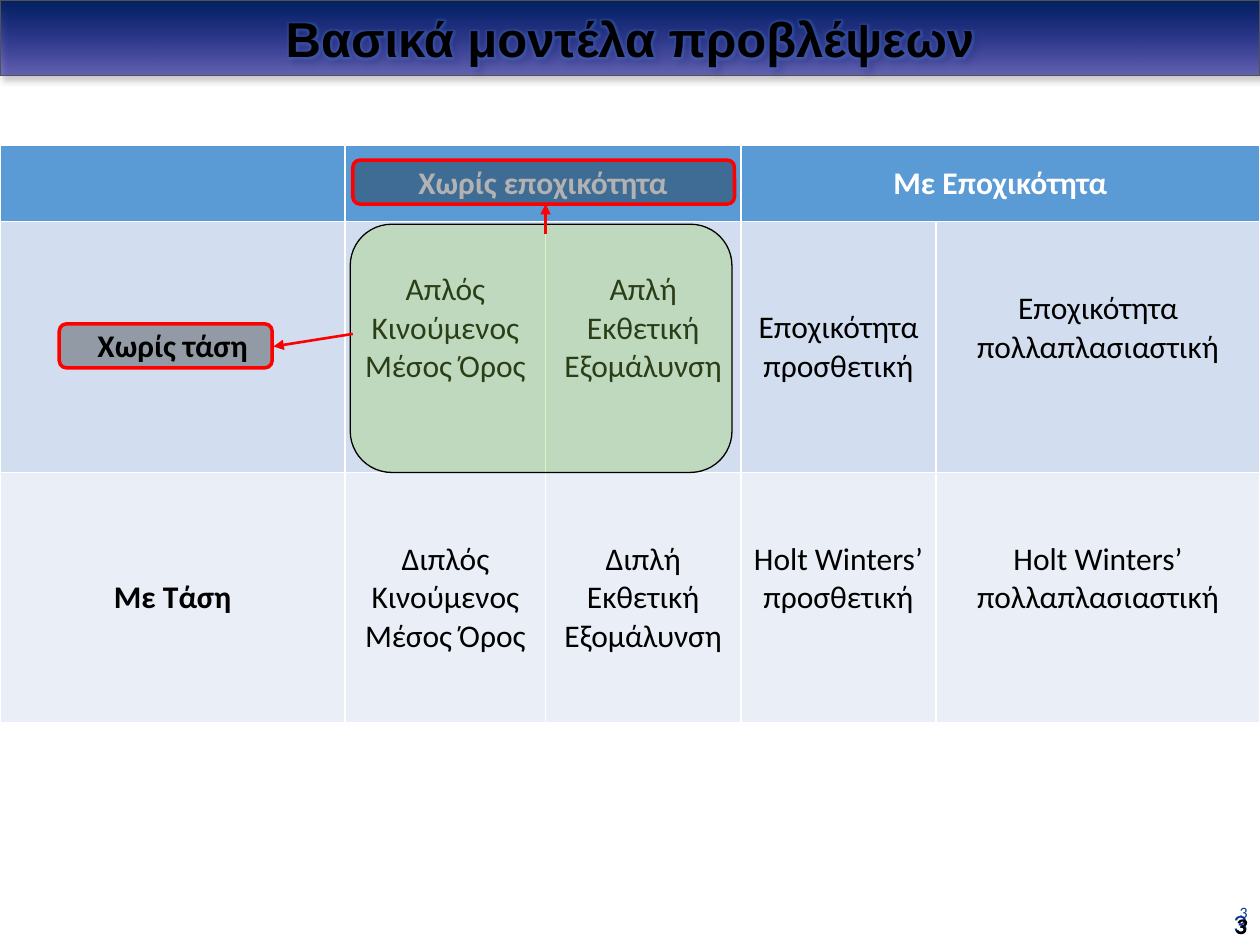
from lxml.etree import SubElement
from pptx import Presentation
from pptx.dml.color import RGBColor
from pptx.enum.shapes import MSO_CONNECTOR, MSO_SHAPE
from pptx.enum.text import MSO_ANCHOR as Anchor, PP_ALIGN as Align
from pptx.oxml import parse_xml
from pptx.oxml.ns import nsdecls, qn
from pptx.util import Inches, Pt

BLACK = RGBColor(0x00, 0x00, 0x00)
WHITE = RGBColor(0xFF, 0xFF, 0xFF)
RED = RGBColor(0xFF, 0x00, 0x00)
GREEN = RGBColor(0x92, 0xD0, 0x50)
NUMBER_BLUE = RGBColor(0x00, 0x33, 0x99)
TITLE_BORDER = RGBColor(0x52, 0x52, 0x52)
NAVY = RGBColor(0x00, 0x20, 0x60)
DEEP_BLUE = RGBColor(0x00, 0x00, 0x99)
GLOW_BLUE = RGBColor(0x44, 0x72, 0xC4)
HEADER_FILL = RGBColor(0x5B, 0x9B, 0xD5)
BAND_FILLS = [RGBColor(0xD2, 0xDE, 0xEF), RGBColor(0xEA, 0xEF, 0xF7)]

COLUMN_WIDTHS = [2.74, 1.59, 1.55, 1.55, 2.57]
ROW_HEIGHTS = [0.61, 1.99, 1.99]
HEADER = ["", "Χωρίς εποχικότητα", None, "Με Εποχικότητα", None]
MODELS = [
    ["Χωρίς τάση", "Απλός Κινούμενος Μέσος Όρος", "Απλή Εκθετική Εξομάλυνση",
     "Εποχικότητα προσθετική", "Εποχικότητα\nπολλαπλασιαστική"],
    ["Με Τάση", "Διπλός Κινούμενος Μέσος Όρος", "Διπλή Εκθετική Εξομάλυνση",
     "Holt Winters’ προσθετική", "Holt Winters’\nπολλαπλασιαστική"],
]
RAISED_CELLS = {(1, 1), (1, 2), (1, 4), (2, 3), (2, 4)}
RAISED_MARGIN = 0.35


def write_text(tf, text, size, font, color, align, bold=False, italic=False):
    for i, line in enumerate(text.split("\n")):
        p = tf.paragraphs[0] if i == 0 else tf.add_paragraph()
        p.alignment = align
        r = p.add_run()
        r.text = line
        r.font.size = Pt(size)
        r.font.name = font
        r.font.color.rgb = color
        r.font.bold = bold
        r.font.italic = italic


def color_xml(color, alpha):
    return f'<a:srgbClr val="{color}"><a:alpha val="{alpha * 1000}"/></a:srgbClr>'


def add_models_table(slide):
    table = slide.shapes.add_table(
        len(ROW_HEIGHTS), len(COLUMN_WIDTHS), Inches(0), Inches(1.15),
        Inches(sum(COLUMN_WIDTHS)), Inches(sum(ROW_HEIGHTS))).table
    for column, width in zip(table.columns, COLUMN_WIDTHS):
        column.width = Inches(width)
    for row, height in zip(table.rows, ROW_HEIGHTS):
        row.height = Inches(height)
    for col in (1, 3):
        table.cell(0, col).merge(table.cell(0, col + 1))
    fills = [HEADER_FILL, *BAND_FILLS]
    for row, texts in enumerate([HEADER, *MODELS]):
        for col, text in enumerate(texts):
            cell = table.cell(row, col)
            cell.fill.solid()
            cell.fill.fore_color.rgb = fills[row]
            cell.vertical_anchor = Anchor.MIDDLE
            if (row, col) in RAISED_CELLS:
                cell.margin_bottom = Inches(RAISED_MARGIN)
            if text:
                write_text(cell.text_frame, text, 18, "Calibri",
                           BLACK if row else WHITE, Align.CENTER,
                           bold=row == 0 or col == 0)


def add_title_bar(slide, text):
    sp = slide.shapes.add_shape(MSO_SHAPE.RECTANGLE, 0, 0, Inches(10), Inches(0.6))
    sp.line.color.rgb = TITLE_BORDER
    sp.line.width = Pt(0.75)
    gradient = parse_xml(
        f'<a:gradFill {nsdecls("a")} rotWithShape="1"><a:gsLst>'
        f'<a:gs pos="0">{color_xml(DEEP_BLUE, 50)}</a:gs>'
        f'<a:gs pos="100000">{color_xml(NAVY, 100)}</a:gs>'
        '</a:gsLst><a:lin ang="16200000" scaled="0"/></a:gradFill>')
    shadow = parse_xml(
        f'<a:effectLst {nsdecls("a")}><a:outerShdw blurRad="50800" dist="38100" '
        f'dir="2700000">{color_xml(BLACK, 40)}</a:outerShdw></a:effectLst>')
    sp_pr = sp.element.spPr
    sp_pr.find(qn("a:ln")).addprevious(gradient)
    sp_pr.append(shadow)
    tf = sp.text_frame
    tf.vertical_anchor = Anchor.MIDDLE
    write_text(tf, text, 28, "Arial", BLACK, Align.CENTER, bold=True)
    glow = parse_xml(
        f'<a:effectLst {nsdecls("a")}><a:glow rad="63500">'
        f'{color_xml(GLOW_BLUE, 40)}</a:glow></a:effectLst>')
    r_pr = tf.paragraphs[0].runs[0].font._element
    r_pr.find(qn("a:solidFill")).addnext(glow)


def add_page_number(slide, box, anchor, size, font, color, bold=False, italic=False):
    tf = slide.shapes.add_textbox(*map(Inches, box)).text_frame
    tf.word_wrap = True
    tf.vertical_anchor = anchor
    write_text(tf, "3", size, font, color, Align.RIGHT, bold, italic)


def add_highlight(slide, box, fill, line, width):
    sp = slide.shapes.add_shape(MSO_SHAPE.ROUNDED_RECTANGLE, *map(Inches, box))
    sp.shadow.inherit = False
    sp.fill.solid()
    sp.fill.fore_color.rgb = fill
    color = sp.element.spPr.find(qn("a:solidFill"))[0]
    SubElement(color, qn("a:alpha"), val="30000")
    sp.line.color.rgb = line
    sp.line.width = Pt(width)


def add_arrow(slide, *ends):
    arrow = slide.shapes.add_connector(MSO_CONNECTOR.STRAIGHT, *map(Inches, ends))
    arrow.line.color.rgb = RED
    arrow.line.width = Pt(1.5)
    sp_pr = arrow._element.spPr
    SubElement(sp_pr.find(qn("a:ln")), qn("a:tailEnd"), type="triangle")
    SubElement(sp_pr, qn("a:effectLst"))


def main():
    prs = Presentation()
    prs.slide_width = Inches(10)
    prs.slide_height = Inches(7.5)
    slide = prs.slides.add_slide(prs.slide_layouts[6])

    add_models_table(slide)
    footer = (7.67, 6.98, 2.33, 0.52)
    add_page_number(slide, footer, Anchor.MIDDLE, 9, "Calibri", NUMBER_BLUE)
    add_page_number(slide, footer, Anchor.BOTTOM, 14, "Arial", NUMBER_BLUE)
    add_page_number(slide, (9.5, 7.2, 0.5, 0.3), Anchor.BOTTOM, 12, "Arial", BLACK,
                    bold=True, italic=True)
    add_title_bar(slide, "Βασικά μοντέλα προβλέψεων")
    add_highlight(slide, (2.78, 1.78, 3.03, 1.97), GREEN, BLACK, 0.75)
    add_highlight(slide, (2.8, 1.27, 3.03, 0.35), BLACK, RED, 2)
    add_highlight(slide, (0.47, 2.57, 1.69, 0.35), BLACK, RED, 2)
    add_arrow(slide, 2.8, 2.65, 2.17, 2.75)
    add_arrow(slide, 4.33, 1.86, 4.33, 1.62)

    prs.save("out.pptx")


if __name__ == "__main__":
    main()
